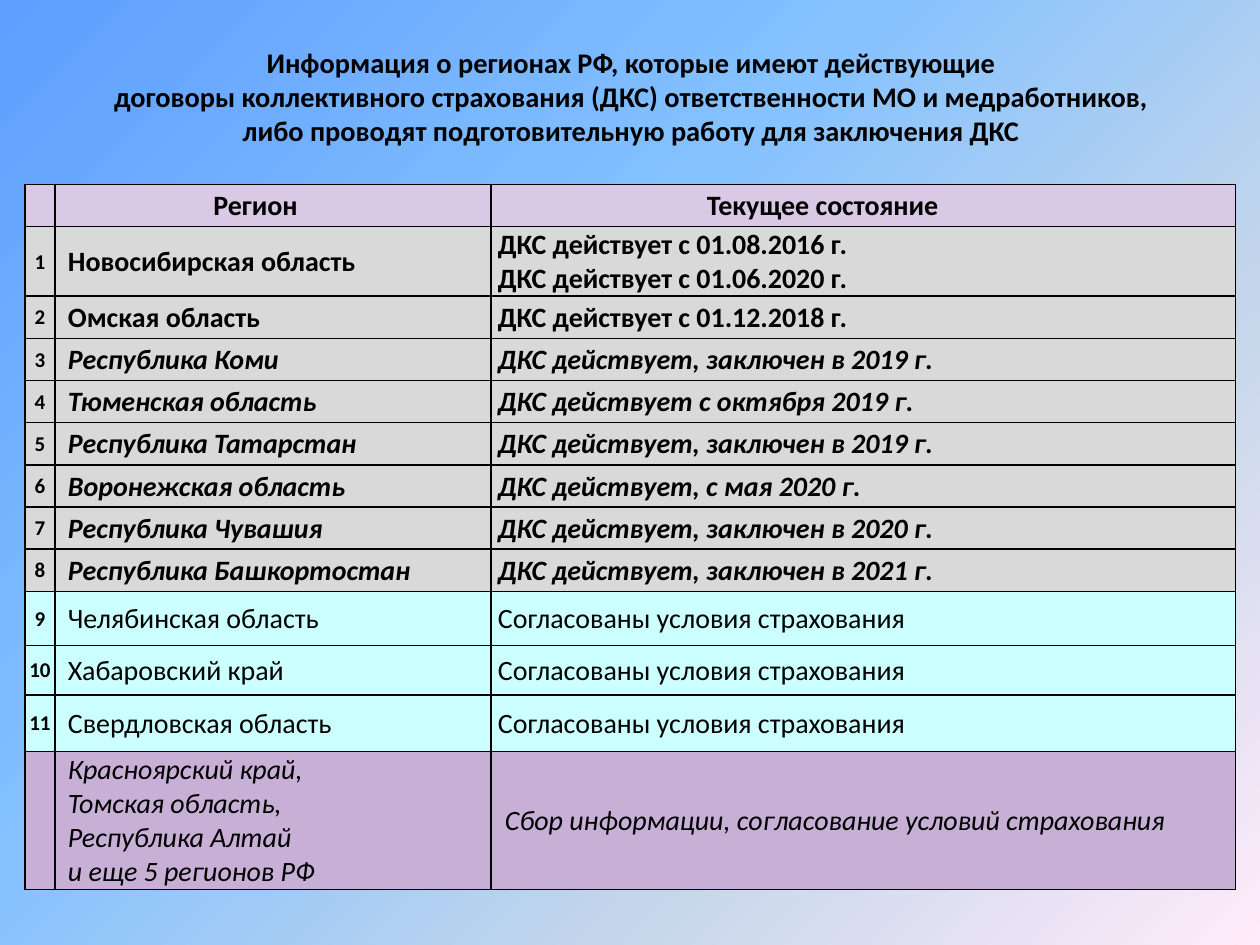
from copy import deepcopy
from dataclasses import dataclass

from lxml.etree import SubElement
from pptx import Presentation
from pptx.dml.color import RGBColor as Color
from pptx.enum.text import MSO_ANCHOR as Anchor, MSO_AUTO_SIZE as AutoSize, PP_ALIGN as Align
from pptx.oxml.ns import qn
from pptx.util import Cm, Pt


@dataclass(frozen=True)
class Theme:
    """Colours and type sizes of the slide."""
    font: str = "Calibri"
    title_size: float = 16.2
    body_size: float = 16
    number_size: float = 12
    ink: str = "000000"
    header: str = "DAC9E4"
    active: str = "D9D9D9"
    agreed: str = "CCFFFF"
    pending: str = "C8AFD6"
    gradient: tuple = ((0, "5E9EFF"), (0.4, "85C2FF"), (0.7, "C4D6EB"), (1, "FFEBFA"))


@dataclass
class Row:
    """One table row: texts, height and look."""
    region: str
    status: str
    fill: str
    number: str = ""
    height: float = 0.85
    bold: bool = False
    italic: bool = False
    indents: tuple = (0.26, 0.14)


class SlideBuilder:
    """Adds styled elements to the current slide."""

    def __init__(self, slide, theme):
        self.slide = slide
        self.theme = theme

    def background(self):
        """Fill the background with the diagonal gradient."""
        fill = self.slide.background.fill
        fill.gradient()
        fill.gradient_angle = 315
        stop_list = next(self.slide.element.iter(qn("a:gsLst")))
        while len(stop_list) < len(self.theme.gradient):
            stop_list.append(deepcopy(stop_list[0]))
        for stop, (position, colour) in zip(fill.gradient_stops, self.theme.gradient):
            stop.position = position
            stop.color.rgb = Color.from_string(colour)

    def format_text(self, text_frame, size, bold, italic, alignment):
        """Apply one style to every run."""
        for paragraph in text_frame.paragraphs:
            paragraph.alignment = alignment
            for run in paragraph.runs:
                font = run.font
                font.name, font.size = self.theme.font, Pt(size)
                font.bold, font.italic = bold, italic
                font.color.rgb = Color.from_string(self.theme.ink)

    def title(self, text, left, top, width, height):
        """Place the centred title."""
        shape = self.slide.shapes.title
        shape.left, shape.top, shape.width, shape.height = map(Cm, (left, top, width, height))
        text_frame = shape.text_frame
        text_frame.text = text
        text_frame.word_wrap = True
        text_frame.auto_size = AutoSize.NONE
        text_frame.vertical_anchor = Anchor.MIDDLE
        text_frame.margin_bottom = Cm(0.33)
        self.format_text(text_frame, self.theme.title_size, True, False, Align.CENTER)

    def borders(self, cell):
        """Draw a thin line on all four sides of a cell."""
        properties = cell._tc.get_or_add_tcPr()
        for index, side in enumerate(("lnL", "lnR", "lnT", "lnB")):
            line = properties.makeelement(qn(f"a:{side}"), {"w": str(Pt(1))})
            solid = SubElement(line, qn("a:solidFill"))
            SubElement(solid, qn("a:srgbClr"), val=self.theme.ink)
            properties.insert(index, line)

    def cell(self, cell, text, row, indent, size, bold, italic, alignment):
        """Fill, frame and label one cell."""
        cell.margin_left, cell.margin_right = Cm(indent), Cm(0.02)
        cell.margin_top, cell.margin_bottom = Cm(0.02), Cm(0)
        cell.vertical_anchor = Anchor.MIDDLE
        cell.fill.solid()
        cell.fill.fore_color.rgb = Color.from_string(row.fill)
        self.borders(cell)
        if text:
            cell.text_frame.text = text
            self.format_text(cell.text_frame, size, bold, italic, alignment)

    def table(self, rows, left, top, widths):
        """Add the table of regions."""
        height = sum(row.height for row in rows)
        table = self.slide.shapes.add_table(
            len(rows), len(widths), Cm(left), Cm(top), Cm(sum(widths)), Cm(height)).table
        table.first_row = table.horz_banding = False
        for column, width in zip(table.columns, widths):
            column.width = Cm(width)
        for index, row in enumerate(rows):
            table.rows[index].height = Cm(row.height)
            self.cell(table.cell(index, 0), row.number, row, 0.02,
                      self.theme.number_size, True, False, Align.CENTER)
            for column, text in enumerate((row.region, row.status), 1):
                self.cell(table.cell(index, column), text, row, row.indents[column - 1],
                          self.theme.body_size, row.bold, row.italic, Align.LEFT)


def region_rows(theme):
    """Return the table rows in order."""
    signed = [
        ("Новосибирская область", "ДКС действует с 01.08.2016 г.\nДКС действует с 01.06.2020 г."),
        ("Омская область", "ДКС действует с 01.12.2018 г."),
        ("Республика Коми", "ДКС действует, заключен в 2019 г."),
        ("Тюменская область", "ДКС действует с октября 2019 г."),
        ("Республика Татарстан", "ДКС действует, заключен в 2019 г."),
        ("Воронежская область", "ДКС действует, с мая 2020 г."),
        ("Республика Чувашия", "ДКС действует, заключен в 2020 г."),
        ("Республика Башкортостан", "ДКС действует, заключен в 2021 г."),
    ]
    agreed = [("Челябинская область", 1.09), ("Хабаровский край", 1), ("Свердловская область", 1.14)]
    rows = [Row("Регион", "Текущее состояние", theme.header, bold=True, indents=(3.19, 4.35))]
    for number, (region, status) in enumerate(signed, 1):
        rows.append(Row(region, status, theme.active, str(number),
                        1.4 if "\n" in status else 0.85, bold=True, italic=number > 2))
    for number, (region, height) in enumerate(agreed, len(signed) + 1):
        rows.append(Row(region, "Согласованы условия страхования", theme.agreed, str(number), height))
    rows.append(Row("Красноярский край,\nТомская область,\nРеспублика Алтай\nи еще 5 регионов РФ",
                    "Сбор информации, согласование условий страхования",
                    theme.pending, height=2.78, italic=True, indents=(0.26, 0.28)))
    return rows


def main():
    """Build and save the slide."""
    presentation = Presentation()
    presentation.slide_width, presentation.slide_height = Cm(25.4), Cm(19.05)
    theme = Theme()
    builder = SlideBuilder(presentation.slides.add_slide(presentation.slide_layouts[5]), theme)
    builder.background()
    builder.title("Информация о регионах РФ, которые имеют действующие\v"
                  "договоры коллективного страхования (ДКС) ответственности МО и медработников,\v"
                  "либо проводят подготовительную работу для заключения ДКС",
                  1.3, 0.74, 22.83, 2.59)
    builder.table(region_rows(theme), 0.5, 3.72, (0.61, 8.79, 15.01))
    presentation.save("out.pptx")


if __name__ == "__main__":
    main()
